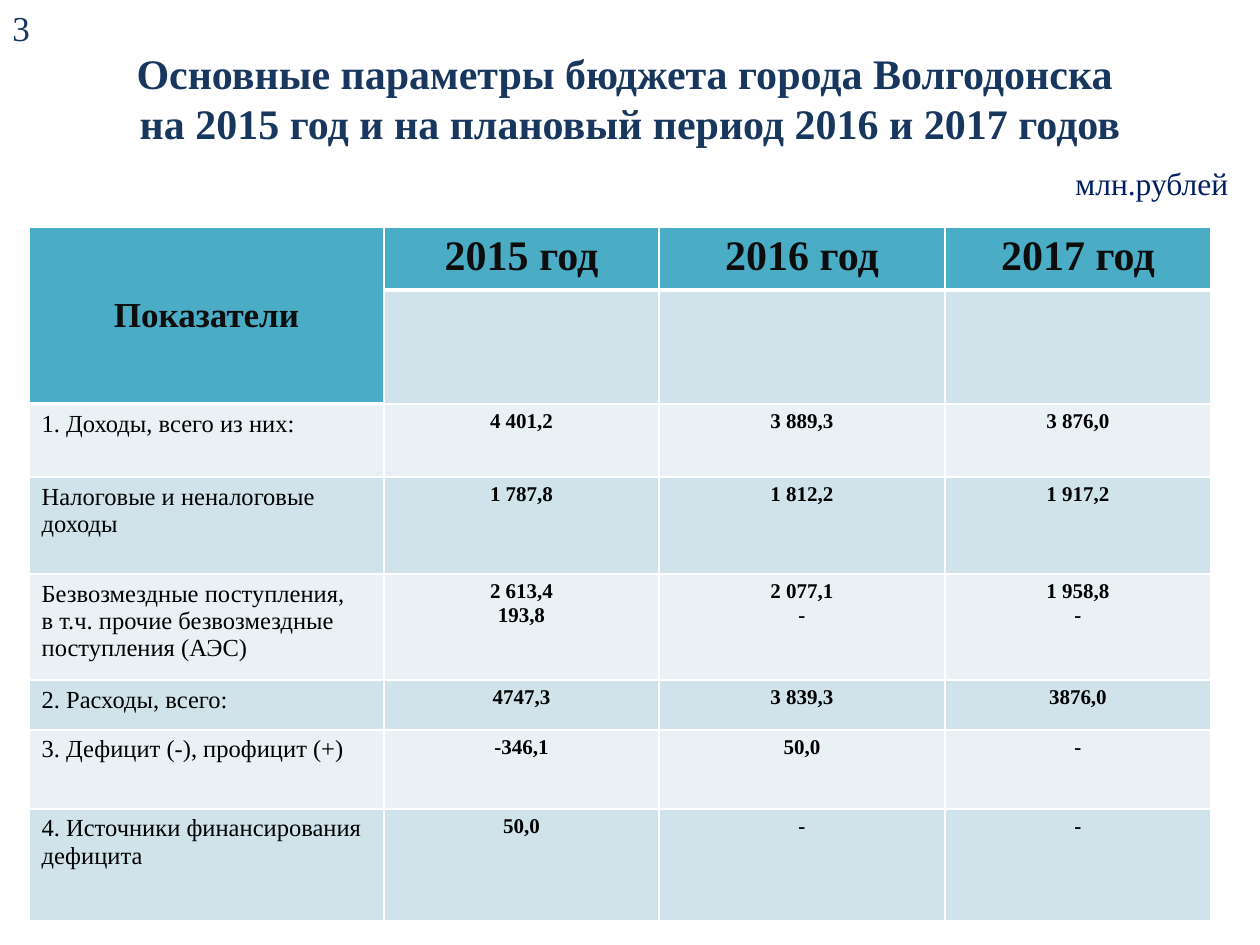
from copy import deepcopy
from dataclasses import dataclass

from lxml.etree import SubElement
from pptx import Presentation
from pptx.dml.color import RGBColor
from pptx.enum.text import MSO_ANCHOR as Anchor, PP_ALIGN as Align
from pptx.oxml.ns import qn
from pptx.util import Emu, Pt


@dataclass(frozen=True)
class Theme:
    """Colours, font and type sizes of the deck."""
    font: str = "Times New Roman"
    navy: str = "17375E"
    unit: str = "002060"
    ink: str = "000000"
    head_ink: str = "0D0D0D"
    head_fill: str = "4BACC6"
    bands: tuple = ("E9F1F5", "D0E3EA")
    border: str = "FFFFFF"
    title_size: int = 24
    number_size: int = 20
    unit_size: int = 18
    label_size: int = 14
    value_size: int = 12


THEME = Theme()
COLUMNS = (355, 275, 286, 266)
ROWS = (63, 114, 73, 97, 106, 50, 79, 112)
CONTENT = (
    ("Показатели", "2015 год", "2016 год", "2017 год"),
    ("", "", "", ""),
    ("1. Доходы, всего из них:", "4 401,2", "3 889,3", "3 876,0"),
    ("Налоговые и неналоговые доходы", "1 787,8", "1 812,2", "1 917,2"),
    ("Безвозмездные поступления,\nв т.ч. прочие безвозмездные поступления (АЭС)",
     "2 613,4\n193,8", "2 077,1\n-", "1 958,8\n-"),
    ("2. Расходы, всего:", "4747,3", "3 839,3", "3876,0"),
    ("3. Дефицит (-), профицит (+)", "-346,1", "50,0", "-"),
    ("4. Источники финансирования дефицита", "50,0", "-", "-"),
)


def px(length):
    """Turn pixels into EMU."""
    return Emu(round(length * 914400 / 126))


def write(frame, text, size, color, bold=False, align=Align.LEFT):
    """Set the text of a frame and format its runs and line breaks."""
    frame.text = text
    for para in frame.paragraphs:
        para.alignment = align
        for span in para.runs:
            font = span.font
            font.name, font.size, font.bold = THEME.font, Pt(size), bold
            font.color.rgb = RGBColor.from_string(color)
        for line_break in para._p.findall(qn("a:br")):
            line_break.append(deepcopy(para.runs[0].font._element))


def add_title(slide, text):
    """Place the slide title in its placeholder."""
    title = slide.shapes.title
    title.left, title.top, title.width, title.height = map(px, (63, 0, 1134, 195))
    title.text_frame.vertical_anchor = Anchor.MIDDLE
    write(title.text_frame, text, THEME.title_size, THEME.navy, True, Align.CENTER)


def add_label(slide, bounds, text, size, color):
    """Add a wrapping text box."""
    box = slide.shapes.add_textbox(*map(px, bounds))
    box.text_frame.word_wrap = True
    write(box.text_frame, text, size, color)


def set_borders(cell, widths):
    """Draw the left, right, top and bottom borders with widths in points."""
    properties = cell._tc.get_or_add_tcPr()
    for side, width in zip("LRTB", widths):
        line = SubElement(properties, qn(f"a:ln{side}"), w=str(Pt(width)))
        fill = SubElement(line, qn("a:solidFill"))
        SubElement(fill, qn("a:srgbClr"), val=THEME.border)


def style_cell(cell, row, column):
    """Give a cell its borders, fill and text by its place in the table."""
    last_head = 1 if column == 0 else 0
    is_head = row <= last_head
    set_borders(cell, (1, 1, 3 if row == last_head + 1 else 1, 3 if is_head else 1))
    fill = THEME.head_fill if is_head else THEME.bands[row % 2]
    cell.fill.solid()
    cell.fill.fore_color.rgb = RGBColor.from_string(fill)
    if is_head:
        size = THEME.number_size if column == 0 else THEME.title_size
    else:
        size = THEME.label_size if column == 0 else THEME.value_size
    write(cell.text_frame, CONTENT[row][column], size,
          THEME.head_ink if is_head else THEME.ink,
          bold=is_head or column > 0,
          align=Align.CENTER if is_head or column > 0 else Align.LEFT)


def add_budget_table(slide):
    """Add the table of budget figures."""
    bounds = map(px, (29, 227, sum(COLUMNS), sum(ROWS)))
    table = slide.shapes.add_table(len(ROWS), len(COLUMNS), *bounds).table
    for column, width in zip(table.columns, COLUMNS):
        column.width = px(width)
    for row, height in zip(table.rows, ROWS):
        row.height = px(height)
    for row in range(len(ROWS)):
        for column in range(len(COLUMNS)):
            style_cell(table.cell(row, column), row, column)
    corner = table.cell(0, 0)
    corner.merge(table.cell(1, 0))
    corner.vertical_anchor = Anchor.MIDDLE


def main():
    """Build the budget slide."""
    deck = Presentation()
    deck.slide_width, deck.slide_height = px(1260), px(945)
    page = deck.slides.add_slide(deck.slide_layouts[5])
    add_title(page, "Основные параметры бюджета города Волгодонска \v"
                    "на 2015 год и на плановый период 2016 и 2017 годов")
    add_budget_table(page)
    add_label(page, (1063, 158, 197, 127), "млн.рублей", THEME.unit_size, THEME.unit)
    add_label(page, (0, 0, 98, 55), "3", THEME.number_size, THEME.navy)
    deck.save("out.pptx")


if __name__ == "__main__":
    main()
